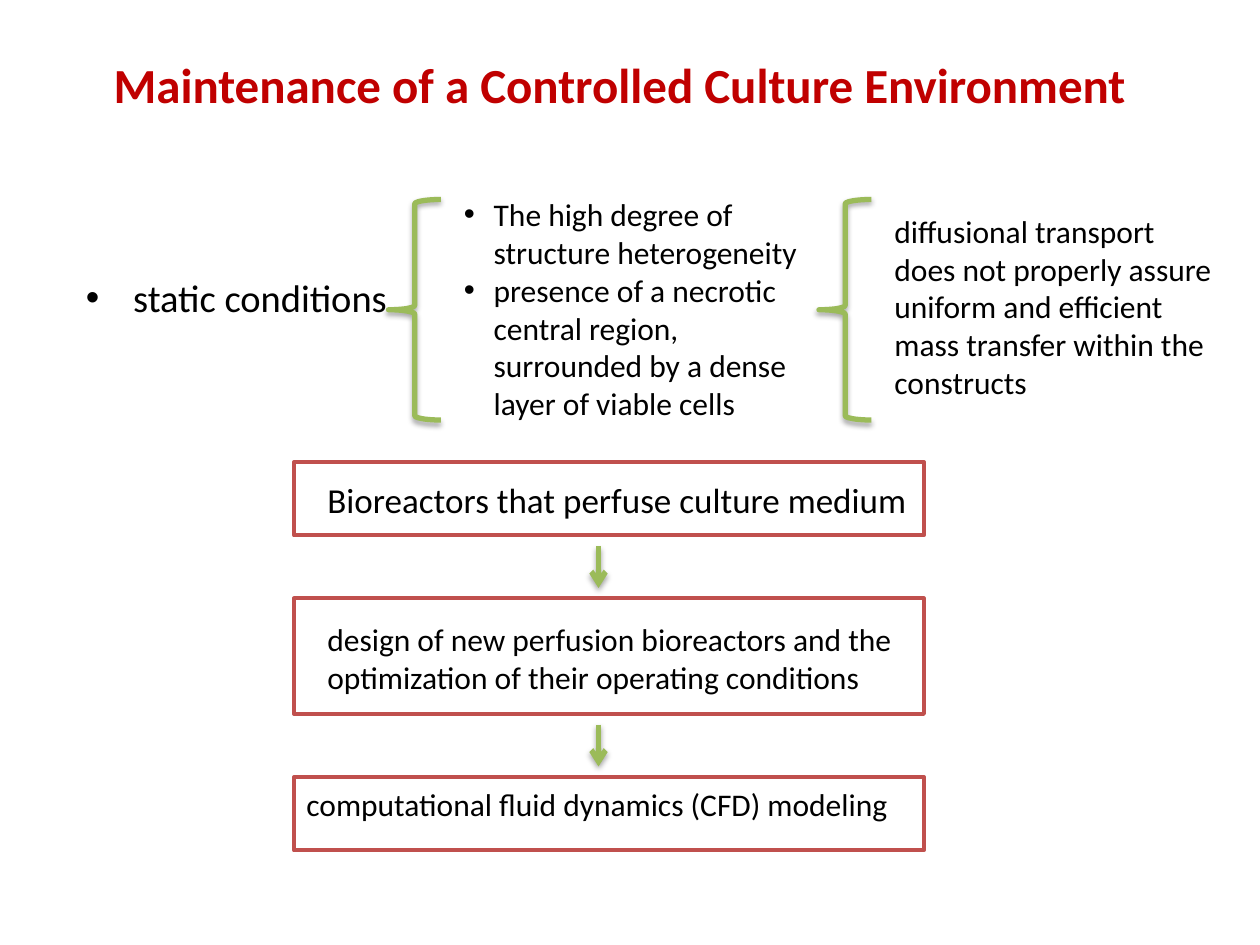
import lxml.etree
import pptx
import pptx.dml.color
import pptx.enum.shapes
import pptx.enum.text
import pptx.oxml.ns
import pptx.util

Pt = pptx.util.Pt
qn = pptx.oxml.ns.qn
SHAPE = pptx.enum.shapes.MSO_SHAPE
ANCHOR = pptx.enum.text.MSO_ANCHOR
ALIGN = pptx.enum.text.PP_ALIGN

COLORS = {
    "title": "C00000",
    "text": "000000",
    "flow": "9BBB59",
    "frame": "C0504D",
    "shadow": "000000",
}


def rgb(name):
    return pptx.dml.color.RGBColor.from_string(COLORS[name])


def add_element(parent, tag, **values):
    element = lxml.etree.SubElement(parent, qn(tag))
    for name, value in values.items():
        element.set(name, str(value))
    return element


def apply(target, values):
    for name, value in values.items():
        setattr(target, name, value)


class SlideBuilder:
    font = "Calibri"

    def __init__(self, slide):
        self.slide = slide

    def style_text(self, paragraph, size, color="text", bold=False):
        apply(paragraph.font, {"name": self.font, "size": Pt(size), "bold": bold})
        paragraph.font.color.rgb = rgb(color)

    def style_line(self, shape, color, width):
        shape.line.color.rgb = rgb(color)
        shape.line.width = Pt(width)

    def cast_shadow(self, shape):
        effects = add_element(shape.element.spPr, "a:effectLst")
        shadow = add_element(effects, "a:outerShdw", blurRad=Pt(3.1), dist=Pt(1.8),
                             dir=5400000, rotWithShape=0)
        tint = add_element(shadow, "a:srgbClr", val=COLORS["shadow"])
        add_element(tint, "a:alpha", val=35000)

    def title(self, wording, left, top, width, height):
        heading = self.slide.shapes.title
        apply(heading, {"left": Pt(left), "top": Pt(top),
                        "width": Pt(width), "height": Pt(height)})
        heading.text_frame.text = wording
        apply(heading.text_frame, {"word_wrap": True, "vertical_anchor": ANCHOR.MIDDLE})
        paragraph = heading.text_frame.paragraphs[0]
        paragraph.alignment = ALIGN.CENTER
        self.style_text(paragraph, 28, "title", True)

    def text(self, lines, left, top, width, height, size=18, bullet_indent=0):
        frame = self.slide.shapes.add_textbox(
            Pt(left), Pt(top), Pt(width), Pt(height)).text_frame
        frame.word_wrap = True
        frame.text = "\n".join(lines)
        for paragraph in frame.paragraphs:
            self.style_text(paragraph, size)
            if bullet_indent:
                properties = paragraph._p.get_or_add_pPr()
                properties.set("marL", str(Pt(bullet_indent)))
                properties.set("indent", str(-Pt(bullet_indent)))
                bullet_font = lxml.etree.Element(qn("a:buFont"), typeface="Arial")
                bullet = lxml.etree.Element(qn("a:buChar"), char="•")
                properties.insert(0, bullet_font)
                properties.insert(1, bullet)

    def outline(self, kind, left, top, width, height, color, line_width):
        shape = self.slide.shapes.add_shape(
            kind, Pt(left), Pt(top), Pt(width), Pt(height))
        shape.fill.background()
        self.style_line(shape, color, line_width)
        return shape

    def brace(self, left, top, width, height):
        shape = self.outline(SHAPE.LEFT_BRACE, left, top, width, height, "flow", 3)
        shape.adjustments[0] = 0.083
        shape.adjustments[1] = 0.5
        self.cast_shadow(shape)

    def frame(self, left, top, width, height):
        shape = self.outline(SHAPE.RECTANGLE, left, top, width, height, "frame", 2.25)
        shape.shadow.inherit = False

    def arrow_down(self, x, top, bottom):
        arrow = self.slide.shapes.add_connector(
            pptx.enum.shapes.MSO_CONNECTOR.STRAIGHT, Pt(x), Pt(top), Pt(x), Pt(bottom))
        self.style_line(arrow, "flow", 3)
        add_element(arrow.line._get_or_add_ln(), "a:tailEnd", type="arrow")
        self.cast_shadow(arrow)


def main():
    deck = pptx.Presentation()
    apply(deck, {"slide_width": Pt(720), "slide_height": Pt(540)})
    page = SlideBuilder(deck.slides.add_slide(deck.slide_layouts[5]))

    page.title("Maintenance of a Controlled Culture Environment", 30, 18, 648, 60)
    page.text(["static conditions"], 42, 153, 190, 34, 22, 27)
    page.text(["The high degree of structure heterogeneity",
               "presence of a necrotic central region, surrounded by a dense "
               "layer of viable cells"], 258, 108, 222, 138, bullet_indent=17)
    page.text(["diffusional transport does not properly assure uniform and "
               "efficient mass transfer within the constructs"], 504, 117.5, 198, 116.5)
    for brace_left in (222, 468):
        page.brace(brace_left, 114, 30, 126)

    steps = [
        (264, 42, "Bioreactors that perfuse culture medium", 180, 270, 348, 20),
        (342, 66, "design of new perfusion bioreactors and the optimization "
                  "of their operating conditions", 180, 351, 360, 18),
        (444, 42, "computational fluid dynamics (CFD) modeling", 168, 445, 360, 18),
    ]
    for top, height, wording, text_left, text_top, text_width, size in steps:
        page.frame(168, top, 360, height)
        page.text([wording], text_left, text_top, text_width, 30, size)
    for step in steps[:-1]:
        bottom = step[0] + step[1]
        page.arrow_down(342, bottom + 6, bottom + 30)

    deck.save("out.pptx")


if __name__ == "__main__":
    main()
